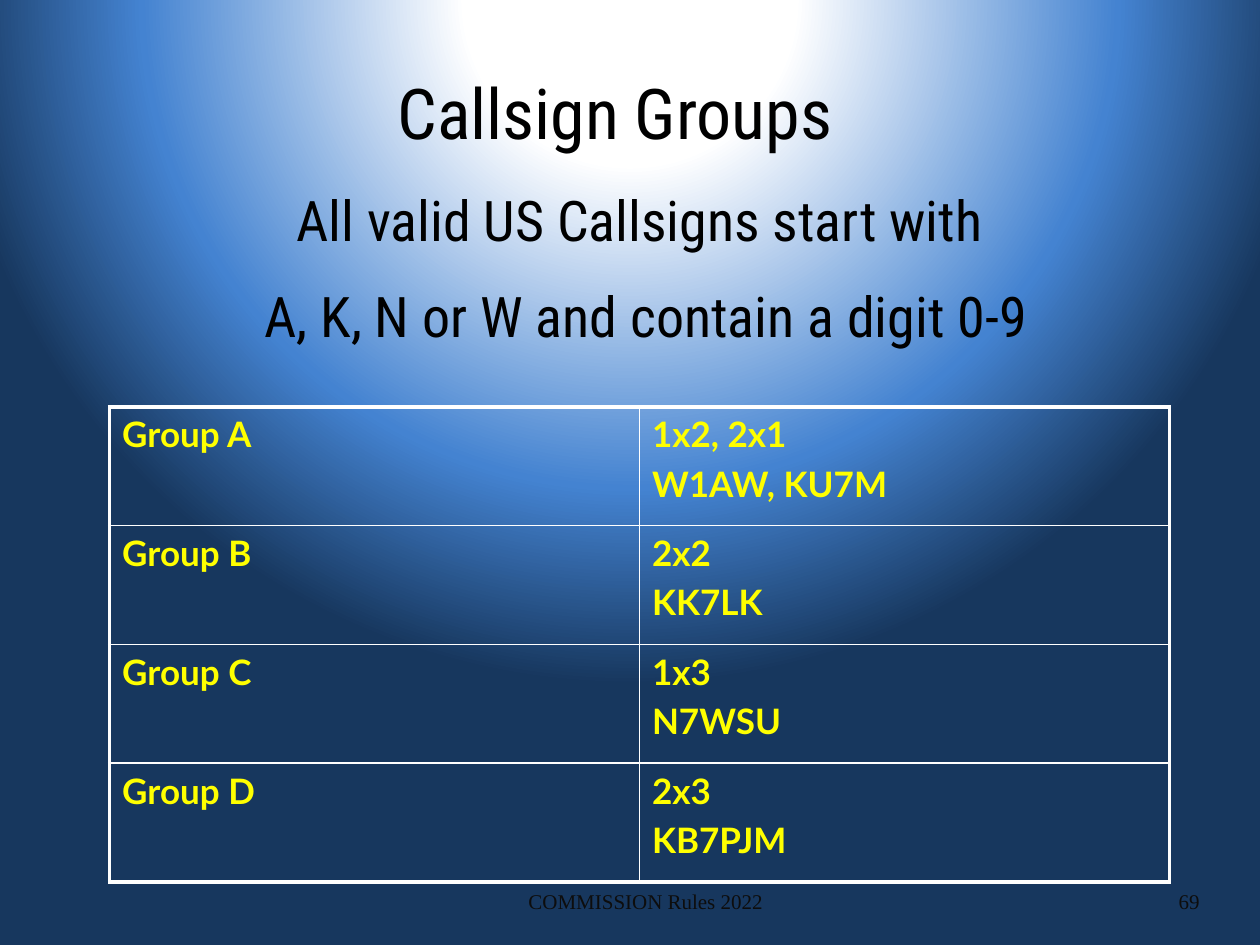
from dataclasses import dataclass
from typing import NamedTuple

from lxml.etree import SubElement
from pptx import Presentation
from pptx.dml.color import RGBColor
from pptx.enum.text import MSO_ANCHOR as Anchor, MSO_AUTO_SIZE as AutoSize, PP_ALIGN as Align
from pptx.oxml.ns import qn
from pptx.util import Inches, Length, Pt

SLIDE_W, SLIDE_H = Inches(10), Inches(7.5)


@dataclass(frozen=True)
class Style:
    font: str
    size: int
    color: str
    bold: bool = False
    before: float = 0


@dataclass(frozen=True)
class Theme:
    title: Style = Style("Roboto Condensed", 40, "000000")
    intro: Style = Style("Roboto Condensed", 32, "000000", before=16.8)
    cell: Style = Style("Lato", 20, "FFFF00", bold=True, before=4)
    footer: Style = Style("Times New Roman", 12, "0D0D0D")
    rule: str = "FFFFFF"
    outer_rule: float = 2.25
    inner_rule: float = 1
    glow: tuple = ((21, "FFFFFF"), (62, "4483D1"), (87, "17375E"))


class Box(NamedTuple):
    """A frame given in shares of the slide's width and height."""
    left: float
    top: float
    width: float
    height: float

    def lengths(self) -> tuple[Length, ...]:
        return tuple(Length(round(share * side)) for share, side
                     in zip(self, (SLIDE_W, SLIDE_H, SLIDE_W, SLIDE_H)))


class Group(NamedTuple):
    name: str
    pattern: str
    examples: str


THEME = Theme()
TITLE_BOX = Box(0.217, 0.5 / 7.5, 0.542, 0.77 / 7.5)
INTRO_BOX = Box(0.088, 1.42 / 7.5, 0.85, 1.45 / 7.5)
TABLE_BOX = Box(0.087, 3.23 / 7.5, 0.841, 3.77 / 7.5)
FOOTER_BOX = Box(0.354, 6.95 / 7.5, 0.317, 0.4 / 7.5)
NUMBER_BOX = Box(0.729, 6.95 / 7.5, 0.233, 0.4 / 7.5)

INTRO = ["All valid US Callsigns start with ", "A, K, N or W and contain a digit 0-9"]
GROUPS = [
    Group("Group A", "1x2, 2x1", "W1AW, KU7M"),
    Group("Group B", "2x2", "KK7LK"),
    Group("Group C", "1x3", "N7WSU"),
    Group("Group D", "2x3", "KB7PJM"),
]


def write(frame, lines: list[str], style: Style, align: Align) -> None:
    for index, line in enumerate(lines):
        paragraph = frame.add_paragraph() if index else frame.paragraphs[0]
        paragraph.alignment = align
        paragraph.space_before = Pt(style.before)
        run = paragraph.add_run()
        run.text = line
        run.font.name, run.font.size, run.font.bold = style.font, Pt(style.size), style.bold
        run.font.color.rgb = RGBColor.from_string(style.color)


def fill_placeholder(holder, box: Box, lines: list[str], style: Style) -> None:
    holder.left, holder.top, holder.width, holder.height = box.lengths()
    frame = holder.text_frame
    frame.word_wrap = True
    frame.auto_size = AutoSize.SHAPE_TO_FIT_TEXT
    frame.vertical_anchor = Anchor.TOP
    write(frame, lines, style, Align.CENTER)
    # Plain centred lines, without bullet or hanging indent
    for paragraph in frame.paragraphs:
        properties = paragraph._p.get_or_add_pPr()
        properties.set("marL", "0")
        properties.set("indent", "0")
        SubElement(properties, qn("a:buNone"))


def add_footer(slide, box: Box, text: str, align: Align) -> None:
    frame = slide.shapes.add_textbox(*box.lengths()).text_frame
    frame.word_wrap = True
    frame.vertical_anchor = Anchor.MIDDLE
    write(frame, [text], THEME.footer, align)


def paint_background(slide) -> None:
    """A round glow whose centre lies above the slide."""
    slide.background.fill.gradient()
    gradient = slide.element.xpath(".//p:bg//a:gradFill")[0]
    for child in list(gradient):
        gradient.remove(child)
    stops = SubElement(gradient, qn("a:gsLst"))
    for position, color in THEME.glow:
        stop = SubElement(stops, qn("a:gs"), pos=str(position * 1000))
        SubElement(stop, qn("a:srgbClr"), val=color)
    circle = SubElement(gradient, qn("a:path"), path="circle")
    SubElement(circle, qn("a:fillToRect"), l="50000", t="-80000", r="50000", b="180000")


def rule_cell(cell, outer_sides: dict[str, bool]) -> None:
    properties = cell._tc.get_or_add_tcPr()
    for index, (side, is_outer) in enumerate(outer_sides.items()):
        width = THEME.outer_rule if is_outer else THEME.inner_rule
        line = properties.makeelement(qn(f"a:ln{side}"), {"w": str(Pt(width))})
        fill = SubElement(line, qn("a:solidFill"))
        SubElement(fill, qn("a:srgbClr"), val=THEME.rule)
        properties.insert(index, line)


def add_group_table(slide, box: Box, groups: list[Group]) -> None:
    table = slide.shapes.add_table(len(groups), 2, *box.lengths()).table
    table.first_row = table.horz_banding = False
    for row, group in enumerate(groups):
        for column, lines in enumerate(([group.name], [group.pattern, group.examples])):
            cell = table.cell(row, column)
            cell.fill.background()
            write(cell.text_frame, lines, THEME.cell, Align.LEFT)
            rule_cell(cell, {"L": column == 0, "R": column == 1,
                             "T": row == 0, "B": row == len(groups) - 1})


def main() -> None:
    deck = Presentation()
    deck.slide_width, deck.slide_height = SLIDE_W, SLIDE_H
    slide = deck.slides.add_slide(deck.slide_layouts[1])
    paint_background(slide)

    # Heading and rule of thumb
    heading, intro = slide.placeholders
    fill_placeholder(heading, TITLE_BOX, ["Callsign Groups"], THEME.title)
    fill_placeholder(intro, INTRO_BOX, INTRO, THEME.intro)

    # Callsign formats by group
    add_group_table(slide, TABLE_BOX, GROUPS)

    # Footer line
    add_footer(slide, FOOTER_BOX, "COMMISSION Rules 2022", Align.CENTER)
    add_footer(slide, NUMBER_BOX, "69", Align.RIGHT)

    deck.save("out.pptx")


if __name__ == "__main__":
    main()
